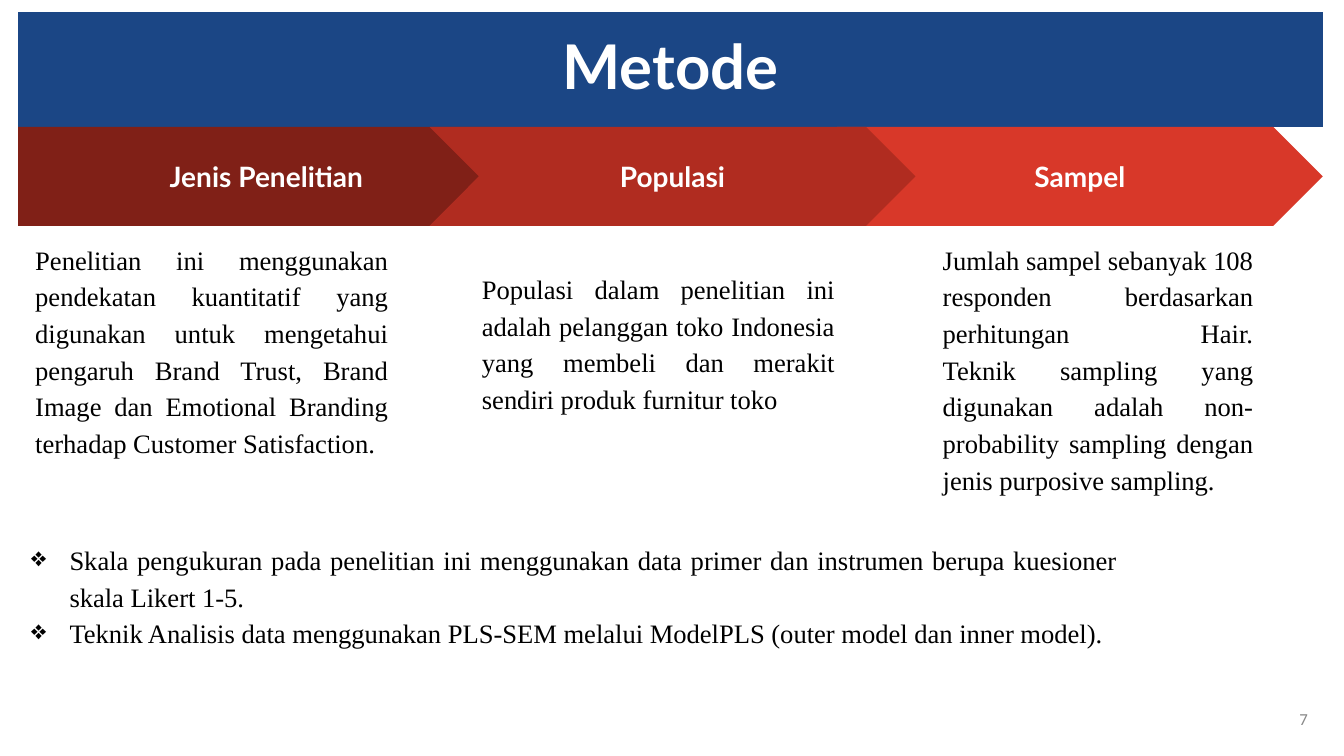
"""Build the research method slide: title band, three arrow steps and notes."""
from dataclasses import dataclass

from lxml import etree
from pptx import Presentation
from pptx.dml.color import RGBColor
from pptx.enum.shapes import MSO_SHAPE
from pptx.enum.text import MSO_ANCHOR, MSO_AUTO_SIZE, PP_ALIGN
from pptx.oxml.ns import qn
from pptx.slide import Slide
from pptx.text.text import TextFrame
from pptx.util import Inches, Pt

PENTAGON, CHEVRON = MSO_SHAPE.PENTAGON, MSO_SHAPE.CHEVRON
TOP, MIDDLE = MSO_ANCHOR.TOP, MSO_ANCHOR.MIDDLE
CENTER, RIGHT, JUSTIFY = PP_ALIGN.CENTER, PP_ALIGN.RIGHT, PP_ALIGN.JUSTIFY
NO_FIT = MSO_AUTO_SIZE.NONE

COLORS = {
    "band": "1B4685",
    "jenis": "802017",
    "populasi": "B02C20",
    "sampel": "D83829",
    "white": "FFFFFF",
    "black": "000000",
    "number": "888888",
}
BAND_LEFT, BAND_TOP, BAND_WIDTH, BAND_HEIGHT = 0.18, 0.12, 12.94, 1.14
STEP_TOP, STEP_HEIGHT = BAND_TOP + BAND_HEIGHT, 0.98
BODY_HEIGHT = 3.81
PAD = 0.13


@dataclass(frozen=True)
class Style:
    """Format of a text block."""
    font: str
    size: float
    color: str
    align: PP_ALIGN
    bold: bool = False
    anchor: MSO_ANCHOR = MIDDLE
    spacing: float = 1.0
    indent: float = 0.0
    bullet: str = ""
    pad_x: float = PAD
    pad_y: float = PAD


@dataclass(frozen=True)
class Step:
    """One arrow with the text below it."""
    name: str
    outline: MSO_SHAPE
    color: str
    left: float
    width: float
    body: str
    body_left: float
    body_top: float
    body_width: float
    body_indent: float = 0.0


TITLE = Style("Lato", 44, "white", CENTER, True, spacing=0.9, pad_x=0.1, pad_y=0.05)
HEADING = Style("Lato", 20, "white", CENTER, True)
NUMBER = Style("Calibri", 12, "number", RIGHT, pad_x=0.1, pad_y=0.05)
BODY = {"font": "Times New Roman", "size": 19, "color": "black",
        "align": JUSTIFY, "anchor": TOP, "spacing": 1.15}

STEPS = [
    Step("Sampel", CHEVRON, "sampel", 8.3, 4.82,
         "Jumlah sampel sebanyak 108 responden berdasarkan perhitungan Hair.\n"
         "Teknik sampling yang digunakan adalah non-probability sampling "
         "dengan jenis purposive sampling.",
         9.08, 2.24, 3.48, 0.14),
    Step("Jenis Penelitian", PENTAGON, "jenis", 0.18, 5.17,
         "Penelitian ini menggunakan pendekatan kuantitatif yang digunakan "
         "untuk mengetahui pengaruh Brand Trust, Brand Image dan Emotional "
         "Branding terhadap Customer Satisfaction.",
         0.22, 2.24, 3.76),
    Step("Populasi", CHEVRON, "populasi", 4.26, 4.82,
         "Populasi dalam penelitian ini adalah pelanggan toko Indonesia yang "
         "membeli dan merakit sendiri produk furnitur toko",
         4.65, 2.53, 3.76),
]
NOTES = [
    "Skala pengukuran pada penelitian ini menggunakan data primer dan "
    "instrumen berupa kuesioner skala Likert 1-5.",
    "Teknik Analisis data menggunakan PLS-SEM melalui ModelPLS "
    "(outer model dan inner model).",
]


def rgb(name: str) -> RGBColor:
    """Return the named colour."""
    return RGBColor.from_string(COLORS[name])


def write(tf: TextFrame, lines: list[str], style: Style) -> None:
    """Fill a text frame with one paragraph per line."""
    frame = {"word_wrap": True, "auto_size": NO_FIT, "vertical_anchor": style.anchor,
             "margin_left": Inches(style.pad_x), "margin_right": Inches(style.pad_x),
             "margin_top": Inches(style.pad_y), "margin_bottom": Inches(style.pad_y)}
    for key, value in frame.items():
        setattr(tf, key, value)
    for i, line in enumerate(lines):
        p = tf.add_paragraph() if i else tf.paragraphs[0]
        p.text = line
        paragraph = {"alignment": style.align, "line_spacing": style.spacing,
                     "space_before": Pt(0), "space_after": Pt(0)}
        for key, value in paragraph.items():
            setattr(p, key, value)
        pPr = p._p.get_or_add_pPr()
        pPr.set("marL", str(Inches(style.indent)))
        pPr.set("indent", str(-Inches(style.indent) if style.bullet else 0))
        if style.bullet:
            etree.SubElement(pPr, qn("a:buChar")).set("char", style.bullet)
        for r in p.runs:
            font = {"name": style.font, "size": Pt(style.size), "bold": style.bold}
            for key, value in font.items():
                setattr(r.font, key, value)
            r.font.color.rgb = rgb(style.color)


def add_text(s: Slide, box: tuple[float, ...], lines: list[str], style: Style) -> None:
    """Add a text box at left, top, width, height."""
    sp = s.shapes.add_textbox(*map(Inches, box))
    write(sp.text_frame, lines, style)


def add_step(s: Slide, step: Step) -> None:
    """Add an arrow and its description."""
    box = (step.left, STEP_TOP, step.width, STEP_HEIGHT)
    sp = s.shapes.add_shape(step.outline, *map(Inches, box))
    sp.shadow.inherit = False
    sp.fill.solid()
    sp.fill.fore_color.rgb = rgb(step.color)
    sp.line.fill.background()
    write(sp.text_frame, [step.name], HEADING)
    add_text(s, (step.body_left, step.body_top, step.body_width, BODY_HEIGHT),
             [step.body], Style(**BODY, indent=step.body_indent))


def add_title(s: Slide, text: str) -> None:
    """Turn the title placeholder into the top band."""
    sp = s.shapes.title
    place = {"left": BAND_LEFT, "top": BAND_TOP,
             "width": BAND_WIDTH, "height": BAND_HEIGHT}
    for key, value in place.items():
        setattr(sp, key, Inches(value))
    sp.fill.solid()
    sp.fill.fore_color.rgb = rgb("band")
    write(sp.text_frame, [text], TITLE)


def main() -> None:
    """Build and save the slide."""
    prs = Presentation()
    prs.slide_width, prs.slide_height = Inches(13.33), Inches(7.5)
    s = prs.slides.add_slide(prs.slide_layouts[5])
    add_title(s, "Metode")
    for step in STEPS:
        add_step(s, step)
    add_text(s, (0.18, 5.22, 11.03, 1.32), NOTES,
             Style(**BODY, indent=0.38, bullet="❖"))
    add_text(s, (12.5, 6.93, 0.57, 0.4), ["7"], NUMBER)
    prs.save("out.pptx")


if __name__ == "__main__":
    main()
